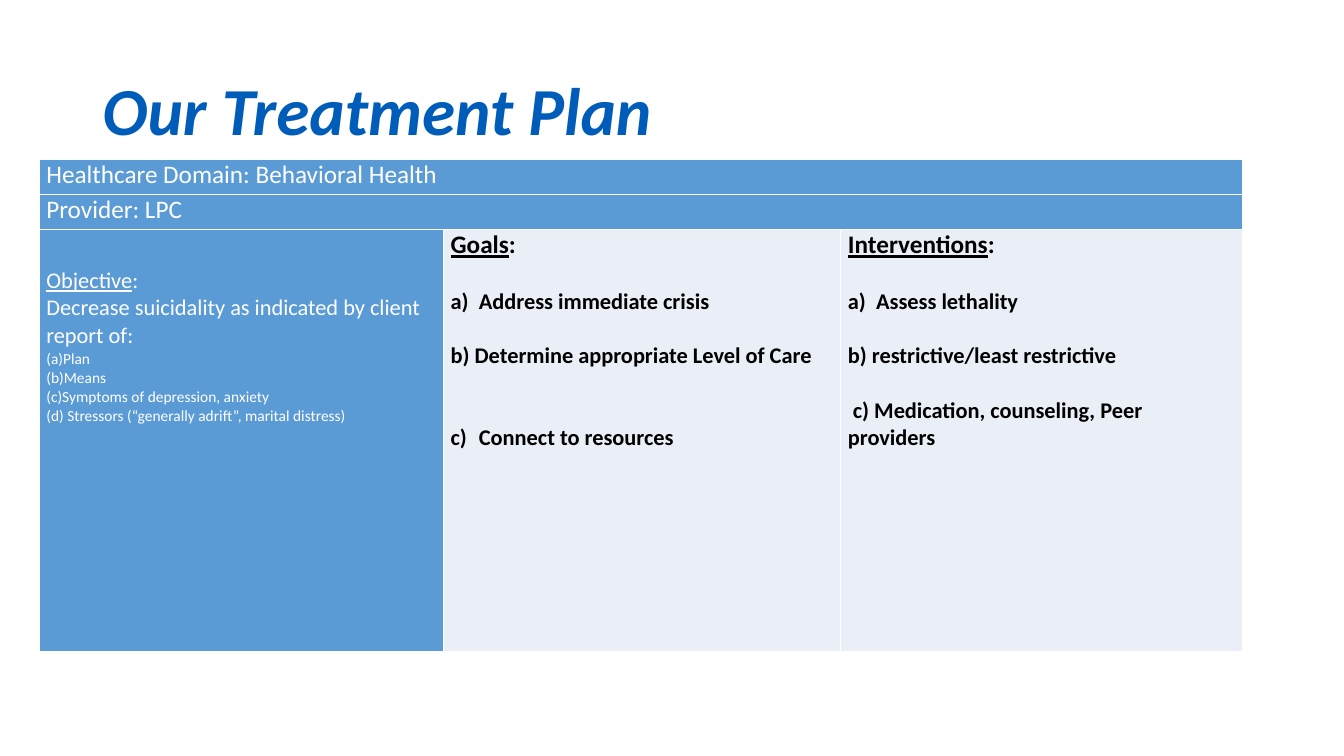
from dataclasses import dataclass

from lxml.etree import SubElement
from pptx import Presentation
from pptx.dml.color import RGBColor
from pptx.enum.text import MSO_ANCHOR
from pptx.oxml.ns import qn
from pptx.util import Inches, Pt


@dataclass(frozen=True)
class Theme:
    font: str = "Calibri"
    title: str = "005CB9"
    blue: str = "5B9BD5"
    pale: str = "EAEFF7"
    white: str = "FFFFFF"
    black: str = "000000"
    title_size: int = 48
    head_size: int = 18
    body_size: int = 16
    small_size: int = 11


THEME = Theme()
LINE = 19.5  # height of one body line, in points


@dataclass(frozen=True)
class Line:
    text: str
    size: int = THEME.body_size
    label: str = ""  # underlined start of the line
    before: float = 0
    indent: float = 0


def format_run(r, size, color, bold=False, italic=False, underline=False):
    f = r.font
    f.name, f.size, f.color.rgb = THEME.font, Pt(size), RGBColor.from_string(color)
    f.bold, f.italic, f.underline = bold, italic, underline


def add_title(slide, text):
    s = slide.shapes.add_textbox(Inches(0.92), Inches(0.4), Inches(11.5), Inches(1.45))
    tf = s.text_frame
    tf.word_wrap = True
    tf.vertical_anchor = MSO_ANCHOR.MIDDLE
    p = tf.paragraphs[0]
    p.text = text
    p.line_spacing = 0.9
    format_run(p.runs[0], THEME.title_size, THEME.title, bold=True, italic=True)


def set_borders(cell, color, width):
    tc_pr = cell._tc.get_or_add_tcPr()
    for i, side in enumerate(("lnL", "lnR", "lnT", "lnB")):
        ln = SubElement(tc_pr, qn(f"a:{side}"), w=str(Pt(width)))
        fill = SubElement(ln, qn("a:solidFill"))
        SubElement(fill, qn("a:srgbClr"), val=color)
        tc_pr.remove(ln)
        tc_pr.insert(i, ln)  # borders come before the fill


def set_paragraph(p, line):
    if line.before:
        p.space_before = Pt(line.before)
    p_pr = p._p.get_or_add_pPr()
    if line.indent:
        p_pr.set("indent", str(Inches(line.indent)))
    if "\t" in line.text:
        tabs = SubElement(p_pr, qn("a:tabLst"))
        SubElement(tabs, qn("a:tab"), pos=str(Inches(0.28)), algn="l")


def fill_cell(cell, lines, fill, color, bold=False, top=0):
    cell.fill.solid()
    cell.fill.fore_color.rgb = RGBColor.from_string(fill)
    cell.margin_left = cell.margin_right = Inches(0.07)
    cell.margin_top, cell.margin_bottom = Inches(top), Inches(0)
    tf = cell.text_frame
    for i, line in enumerate(lines):
        p = tf.add_paragraph() if i else tf.paragraphs[0]
        set_paragraph(p, line)
        for text, underline in ((line.label, True), (line.text, False)):
            if text:
                r = p.add_run()
                r.text = text
                format_run(r, line.size, color, bold=bold, underline=underline)


def add_plan_table(slide, headers, objective, goals, interventions):
    widths, heights = (4.01, 3.94, 3.98), (0.35, 0.35, 4.18)
    table = slide.shapes.add_table(
        len(heights), len(widths), Inches(0.39), Inches(1.58),
        Inches(sum(widths)), Inches(sum(heights))).table
    table.first_row = table.horz_banding = False
    for column, width in zip(table.columns, widths):
        column.width = Inches(width)
    for row, height in zip(table.rows, heights):
        row.height = Inches(height)
    for cell in table.iter_cells():
        set_borders(cell, THEME.white, 1)

    # Full-width header rows
    for i, text in enumerate(headers):
        table.cell(i, 0).merge(table.cell(i, len(widths) - 1))
        fill_cell(table.cell(i, 0), [Line(text, THEME.head_size)], THEME.blue, THEME.white)

    # Plan row
    row = len(headers)
    fill_cell(table.cell(row, 0), objective, THEME.blue, THEME.white, top=0.37)
    for i, lines in enumerate((goals, interventions), start=1):
        fill_cell(table.cell(row, i), lines, THEME.pale, THEME.black, bold=True)


def main():
    prs = Presentation()
    prs.slide_width, prs.slide_height = Inches(13.33), Inches(7.5)
    slide = prs.slides.add_slide(prs.slide_layouts[6])

    add_title(slide, "Our Treatment Plan")

    signs = ("(a)Plan", "(b)Means", "(c)Symptoms of depression, anxiety",
             "(d) Stressors (“generally adrift”, marital distress)")
    objective = [
        Line(":", label="Objective"),
        Line("Decrease suicidality as indicated by client report of:"),
        *(Line(sign, THEME.small_size) for sign in signs),
    ]
    goals = [
        Line(":", THEME.head_size, label="Goals"),
        Line("a)\tAddress immediate crisis", before=LINE),
        Line("b) Determine appropriate Level of Care", before=LINE),
        Line("c)\tConnect to resources", before=2 * LINE),
    ]
    interventions = [
        Line(":", THEME.head_size, label="Interventions"),
        Line("a)\tAssess lethality", before=LINE),
        Line("b) restrictive/least restrictive", before=LINE),
        Line("c) Medication, counseling, Peer providers", before=LINE, indent=0.05),
    ]
    add_plan_table(slide, ("Healthcare Domain: Behavioral Health", "Provider: LPC"),
                   objective, goals, interventions)

    prs.save("out.pptx")


if __name__ == "__main__":
    main()
